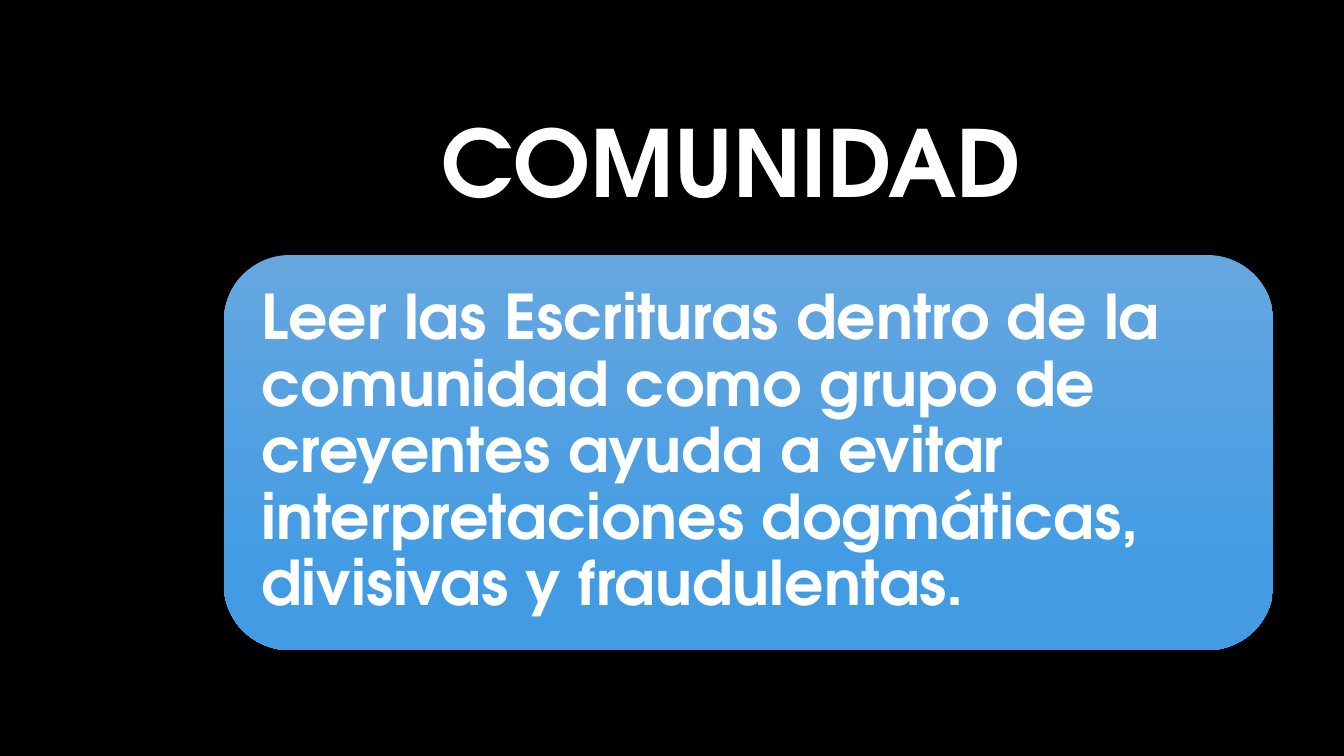
from dataclasses import dataclass

from pptx import Presentation
from pptx.dml.color import RGBColor
from pptx.enum.shapes import MSO_SHAPE
from pptx.enum.text import MSO_ANCHOR, PP_ALIGN
from pptx.util import Inches, Pt

ROUNDED = MSO_SHAPE.ROUNDED_RECTANGLE
MIDDLE = MSO_ANCHOR.MIDDLE
LEFT, CENTER = PP_ALIGN.LEFT, PP_ALIGN.CENTER
TITLE_ONLY = 5


@dataclass(frozen=True)
class Theme:
    font: str = "TeX Gyre Adventor"
    background: RGBColor = RGBColor(0x00, 0x00, 0x00)
    text: RGBColor = RGBColor(0xFF, 0xFF, 0xFF)
    card_stops: tuple = ((0, RGBColor(0x66, 0xA7, 0xE0)),
                         (0.78, RGBColor(0x43, 0x9C, 0xE3)))
    title_size: int = 66
    body_size: int = 44
    line_spacing: float = 0.9


THEME = Theme()


def write(tf, text, size, align):
    tf.word_wrap = True
    tf.vertical_anchor = MIDDLE
    p = tf.paragraphs[0]
    p.alignment = align
    p.line_spacing = THEME.line_spacing
    r = p.add_run()
    r.text = text
    r.font.name = THEME.font
    r.font.size = Pt(size)
    r.font.bold = True
    r.font.color.rgb = THEME.text


def place_title(s, box, text):
    title = s.shapes.title
    title.left, title.top, title.width, title.height = map(Inches, box)
    write(title.text_frame, text, THEME.title_size, CENTER)


def add_card(s, box, text, padding):
    card = s.shapes.add_shape(ROUNDED, *map(Inches, box))
    card.shadow.inherit = False
    card.line.fill.background()
    card.fill.gradient()
    card.fill.gradient_angle = 270
    for stop, (position, color) in zip(card.fill.gradient_stops, THEME.card_stops):
        stop.position = position
        stop.color.rgb = color
    tf = card.text_frame
    tf.margin_left = tf.margin_right = Inches(padding)
    tf.margin_top = tf.margin_bottom = Inches(padding)
    write(tf, text, THEME.body_size, LEFT)


def main():
    prs = Presentation()
    prs.slide_width, prs.slide_height = Inches(13.33), Inches(7.5)
    s = prs.slides.add_slide(prs.slide_layouts[TITLE_ONLY])
    s.background.fill.solid()
    s.background.fill.fore_color.rgb = THEME.background
    place_title(s, (2.55, 1.05, 9.41, 1.23), "COMUNIDAD")
    add_card(s, (2.22, 2.53, 10.41, 3.92),
             "Leer las Escrituras dentro de la comunidad como grupo de creyentes "
             "ayuda a evitar interpretaciones dogmáticas, divisivas y fraudulentas.",
             padding=0.18)
    prs.save("out.pptx")


if __name__ == "__main__":
    main()
